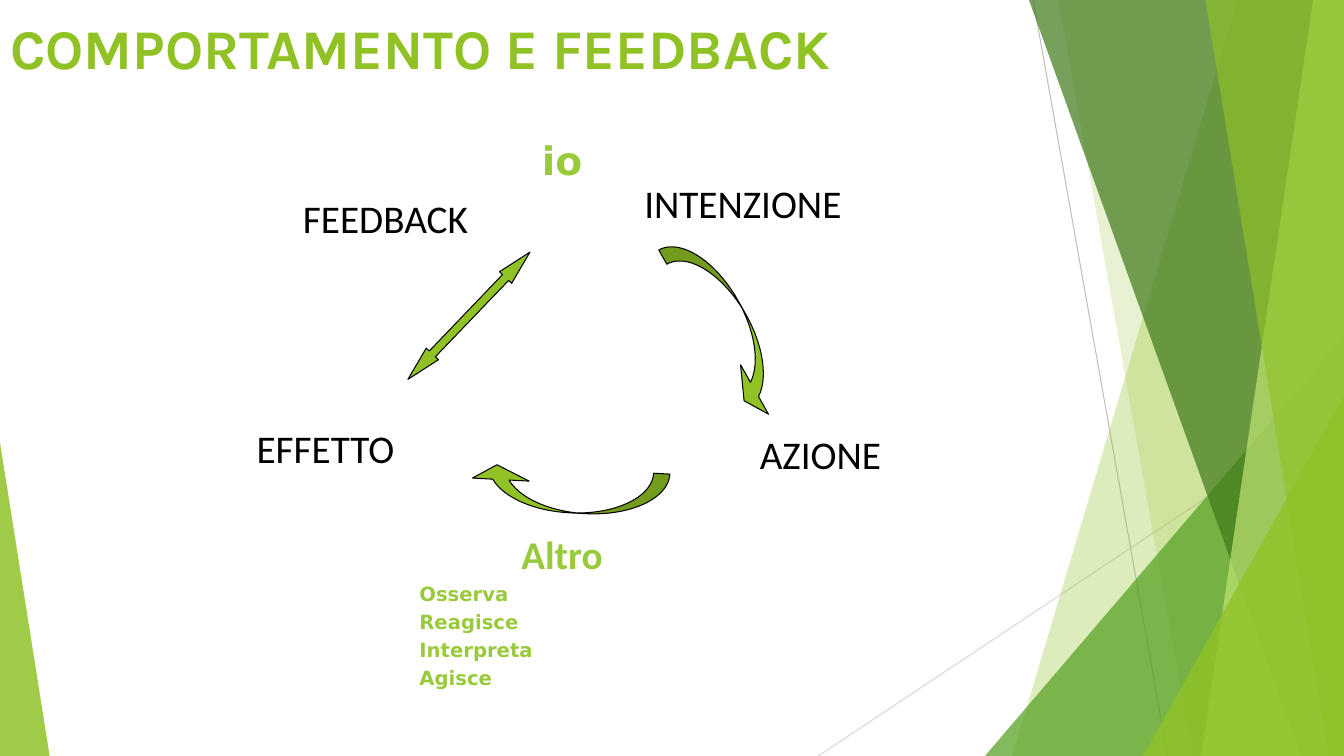
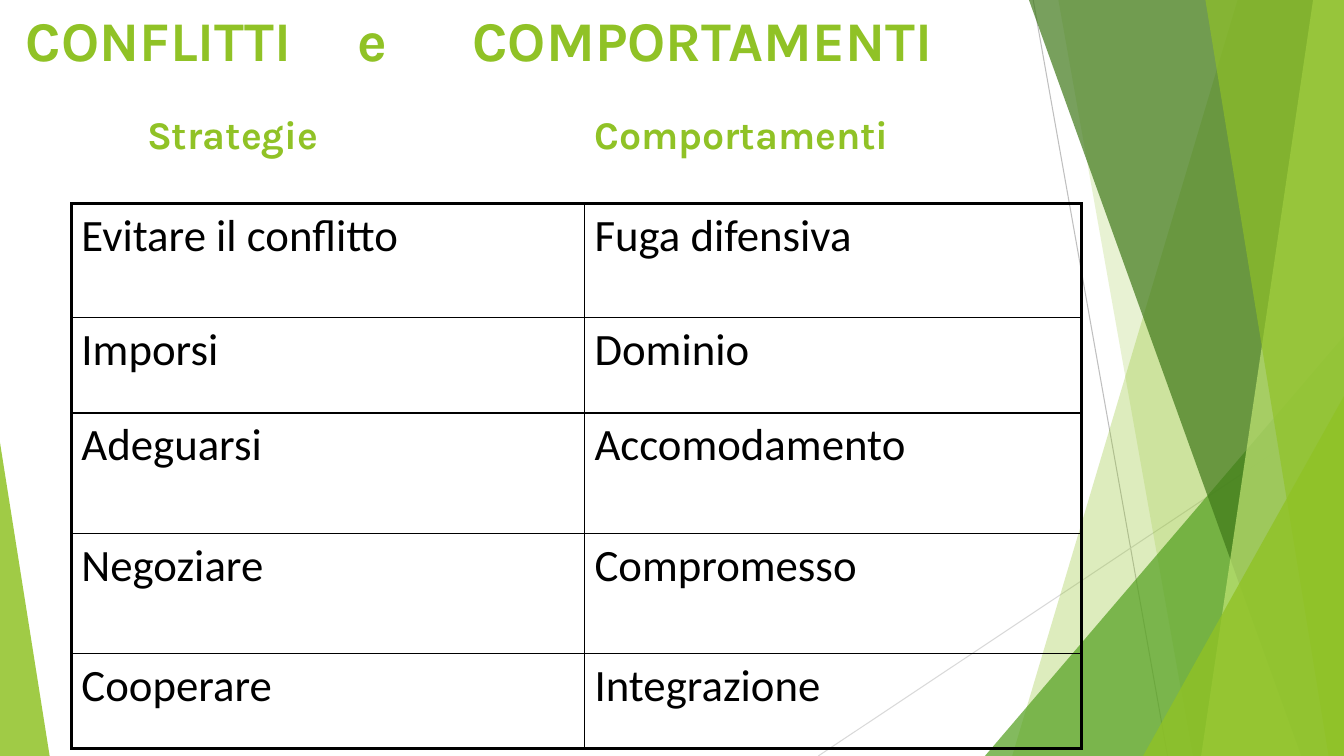
from dataclasses import dataclass

from lxml import etree
from pptx import Presentation
from pptx.dml.color import RGBColor
from pptx.enum import shapes as kinds, text as txt
from pptx.oxml import ns
from pptx.util import Pt


@dataclass(frozen=True)
class Theme:
    """Colours, fonts and type sizes shared by the slides."""
    green: str = "90C226"
    mid_green: str = "54A021"
    dark_green: str = "3F7819"
    pale_green: str = "C0E474"
    accent: str = "99CA3C"
    ink: str = "000000"
    rule: str = "BFBFBF"
    pale_rule: str = "D9D9D9"
    title_font: str = "Karla"
    body_font: str = "Calibri"
    list_font: str = "DejaVu Sans"
    title: float = 40
    heading: float = 28
    item: float = 14
    cell: float = 32
    width: float = 960
    height: float = 540


THEME = Theme()
LEFT, CENTER = txt.PP_ALIGN.LEFT, txt.PP_ALIGN.CENTER
SHAPE = kinds.MSO_SHAPE


def rgb(color):
    """Turn a hex string into a colour."""
    return RGBColor.from_string(color)


def add_xml(parent, tag, **attributes):
    """Append a drawing element to a parent and return it."""
    return etree.SubElement(parent, ns.qn(tag), **attributes)


def place(shape, left, top, width, height):
    """Move and size a shape in points."""
    shape.left, shape.top = Pt(left), Pt(top)
    shape.width, shape.height = Pt(width), Pt(height)


def style(paragraph, font, size, color, bold=False, align=LEFT, before=0):
    """Format a whole paragraph."""
    paragraph.alignment = align
    paragraph.space_before = Pt(before)
    paragraph.font.name, paragraph.font.size = font, Pt(size)
    paragraph.font.bold, paragraph.font.color.rgb = bold, rgb(color)


def set_frame(shape):
    """Make text wrap from the top at its given size."""
    frame = shape.text_frame
    frame.word_wrap = True
    frame.auto_size = txt.MSO_AUTO_SIZE.NONE
    frame.vertical_anchor = txt.MSO_ANCHOR.TOP
    return frame


def set_tabs(paragraph, stops):
    """Give a paragraph left tab stops."""
    tabs = add_xml(paragraph._p.get_or_add_pPr(), "a:tabLst")
    for stop in stops:
        add_xml(tabs, "a:tab", pos=str(Pt(stop)), algn="l")


def set_title(slide, box, lines, inset=7.2):
    """Fill the title with lines of text, size, space before and tab stops."""
    place(slide.shapes.title, *box)
    frame = set_frame(slide.shapes.title)
    frame.margin_left = Pt(inset)
    for number, (wording, size, before, stops) in enumerate(lines):
        line = frame.add_paragraph() if number else frame.paragraphs[0]
        line.text = wording
        if stops:
            set_tabs(line, stops)
        style(line, THEME.title_font, size, THEME.green, True, before=before)


def add_label(slide, box, wording, font=THEME.body_font, color=THEME.ink, bold=False):
    """Add a centred label and return its text frame."""
    label = slide.shapes.add_textbox(*map(Pt, box))
    frame = set_frame(label)
    frame.text = wording
    style(frame.paragraphs[0], font, THEME.heading, color, bold, CENTER)
    return frame


def set_body(slide, box, wording):
    """Use the body placeholder for an unbulleted label."""
    body = slide.placeholders[1]
    place(body, *box)
    line = set_frame(body).paragraphs[0]
    line.text = wording
    properties = line._p.get_or_add_pPr()
    properties.set("marL", "0")
    properties.set("indent", "0")
    add_xml(properties, "a:buNone")
    style(line, THEME.body_font, THEME.heading, THEME.ink)


def add_arrow(slide, kind, box, rotation, adjustments):
    """Add a rotated, outlined block arrow."""
    arrow = slide.shapes.add_shape(kind, *map(Pt, box))
    arrow.rotation = rotation
    for number, value in enumerate(adjustments):
        arrow.adjustments[number] = value
    arrow.shadow.inherit = False
    arrow.fill.solid()
    arrow.fill.fore_color.rgb = rgb(THEME.green)
    arrow.line.color.rgb = rgb(THEME.ink)
    arrow.line.width = Pt(0.75)


def tint(shape, color, opacity):
    """Fill a decorative shape with a see-through colour."""
    shape.shadow.inherit = False
    shape.line.fill.background()
    shape.fill.solid()
    shape.fill.fore_color.rgb = rgb(color)
    solid = shape.element.spPr.find(ns.qn("a:solidFill"))
    add_xml(solid[0], "a:alpha", val=str(opacity * 1000))


def add_ray(slide, start, end, color):
    """Add a thin decorative line."""
    ray = slide.shapes.add_connector(
        kinds.MSO_CONNECTOR.STRAIGHT, *map(Pt, start + end))
    ray.line.color.rgb = rgb(color)
    ray.line.width = Pt(0.75)
    add_xml(ray.element.spPr, "a:effectLst")


def add_panel(slide, top_left, bottom_left, color, opacity):
    """Add a full-height panel with a slanted left edge."""
    outline = slide.shapes.build_freeform(Pt(top_left), 0)
    corners = [(THEME.width, 0), (THEME.width, THEME.height), (bottom_left, THEME.height)]
    outline.add_line_segments([(Pt(x), Pt(y)) for x, y in corners], close=True)
    tint(outline.convert_to_shape(), color, opacity)


def add_corner(slide, left, top, width, peak, color, opacity):
    """Add a triangle standing on the bottom edge."""
    corner = slide.shapes.add_shape(
        SHAPE.ISOSCELES_TRIANGLE, *map(Pt, (left, top, width, THEME.height - top)))
    corner.adjustments[0] = peak
    tint(corner, color, opacity)


def decorate_master(deck, slide):
    """Draw the green facets and move them to the slide master."""
    kept = len(slide.shapes)
    add_ray(slide, (738, 0), (834, 540), THEME.rule)
    add_ray(slide, (960, 290), (584.5, 540), THEME.pale_rule)
    add_panel(slide, 884, 723, THEME.green, 30)
    add_panel(slide, 756, 852, THEME.green, 20)
    add_corner(slide, 703.5, 240, 256.5, 1, THEME.mid_green, 72)
    add_panel(slide, 735, 929.5, THEME.dark_green, 70)
    add_panel(slide, 938, 858, THEME.pale_green, 70)
    add_panel(slide, 861, 949, THEME.green, 65)
    add_corner(slide, 816.5, 283, 143.5, 1, THEME.green, 80)
    add_corner(slide, 0, 316, 35.5, 0, THEME.green, 85)
    for number, facet in enumerate(list(slide.shapes)[kept:], start=100):
        facet.element.xpath(".//p:cNvPr")[0].set("id", str(number))
        deck.slide_master.shapes.element.append(facet.element)


def set_borders(cell, widths):
    """Draw the left, right, top and bottom borders of a cell."""
    properties = cell._tc.get_or_add_tcPr()
    for side, width in zip("LRTB", widths):
        border = add_xml(properties, f"a:ln{side}", w=str(Pt(width)))
        add_xml(add_xml(border, "a:solidFill"), "a:srgbClr", val=THEME.ink)


def add_grid(slide, left, top, widths, heights, rows):
    """Add a plain table with a heavier outer frame."""
    box = (left, top, sum(widths), sum(heights))
    table = slide.shapes.add_table(len(rows), len(widths), *map(Pt, box)).table
    table.first_row = table.horz_banding = False
    for column, width in zip(table.columns, widths):
        column.width = Pt(width)
    for row, height in zip(table.rows, heights):
        row.height = Pt(height)
    for r, wordings in enumerate(rows):
        for c, wording in enumerate(wordings):
            cell = table.cell(r, c)
            edges = (c == 0, c == len(widths) - 1, r == 0, r == len(rows) - 1)
            set_borders(cell, [2.25 if outer else 1 for outer in edges])
            cell.fill.background()
            cell.text = wording
            style(cell.text_frame.paragraphs[0], THEME.body_font, THEME.cell, THEME.ink)


def build_feedback(slide):
    """Build the cycle of behaviour and feedback."""
    set_title(slide, (0, 6, 704, 78), [("COMPORTAMENTO E FEEDBACK", THEME.title, 0, ())])
    set_body(slide, (453, 124.5, 232, 52.5), "INTENZIONE")
    add_label(slide, (454, 304, 264, 45), "AZIONE")
    add_label(slide, (124.5, 299.5, 216, 48), "EFFETTO")
    add_label(slide, (200, 135.5, 150.5, 52), "FEEDBACK")
    curve = (0.371, 1.286, 0.333)
    add_arrow(slide, SHAPE.CURVED_LEFT_ARROW, (504, 161.5, 31.5, 144), 330.5, curve)
    add_arrow(slide, SHAPE.CURVED_LEFT_ARROW, (390, 278.5, 31.5, 144), 93.1, curve)
    add_arrow(slide, SHAPE.LEFT_RIGHT_ARROW, (272, 219.5, 126, 12), 313.8, (0.5, 2.1))
    add_label(slide, (371.5, 93.5, 60, 48), "io", THEME.list_font, THEME.accent, True)
    other = add_label(slide, (121.5, 375, 560, 130.5), "Altro", color=THEME.accent, bold=True)
    for reaction in ("Osserva", "Reagisce", "Interpreta", "Agisce"):
        line = other.add_paragraph()
        line.text = reaction
        line._p.get_or_add_pPr().set("marL", str(Pt(171)))
        style(line, THEME.list_font, THEME.item, THEME.accent, True, before=3.3)


def build_conflicts(slide):
    """Build the table of conflict strategies and behaviours."""
    set_title(slide, (0, 0, 772.5, 122), [
        ("CONFLITTI\te\tCOMPORTAMENTI", THEME.title, 0, (237, 319)),
        ("\tStrategie\tComportamenti", THEME.heading, 27, (86.5, 406)),
    ], inset=18.5)
    add_grid(slide, 51, 145.5, (366.5, 355), (81.5, 68, 86, 86, 68), [
        ("Evitare il conflitto", "Fuga difensiva"),
        ("Imporsi", "Dominio"),
        ("Adeguarsi", "Accomodamento"),
        ("Negoziare", "Compromesso"),
        ("Cooperare", "Integrazione"),
    ])


def main():
    """Build and save the presentation."""
    deck = Presentation()
    deck.slide_width, deck.slide_height = Pt(THEME.width), Pt(THEME.height)
    feedback = deck.slides.add_slide(deck.slide_layouts[1])
    conflicts = deck.slides.add_slide(deck.slide_layouts[5])
    decorate_master(deck, feedback)
    build_feedback(feedback)
    build_conflicts(conflicts)
    deck.save("out.pptx")


if __name__ == "__main__":
    main()
